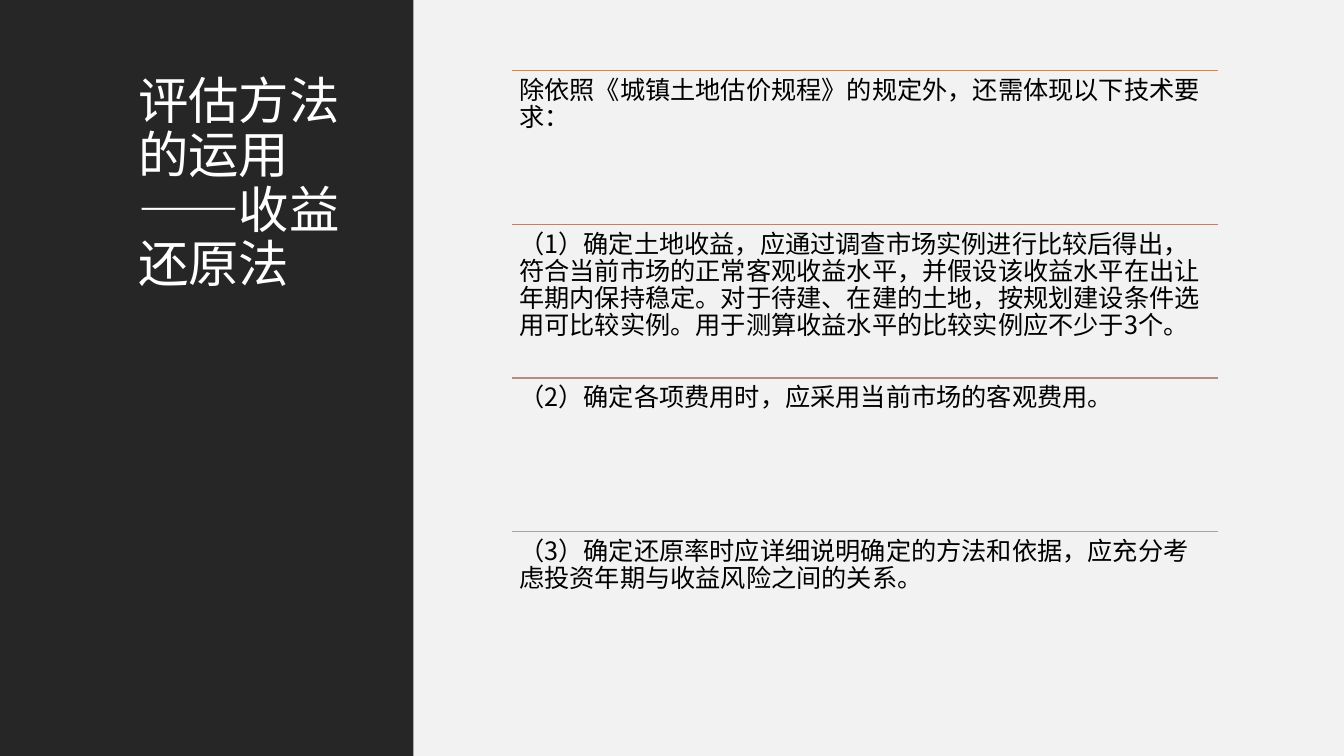
import dataclasses

import lxml.etree
import pptx
import pptx.dml.color
import pptx.enum.lang
import pptx.enum.shapes
import pptx.enum.text
import pptx.oxml.ns
import pptx.util

COLOURS = {
    "sidebar": "262626",
    "content": "F2F2F2",
    "title": "FFFFFF",
    "body": "000000",
    "orange": "ED7D31",
    "terracotta": "D17B5C",
    "mauve": "B98A82",
    "grey": "A5A5A5",
}
FONT = "Noto Sans CJK SC"

# Page layout in inches
PAGE_WIDTH, PAGE_HEIGHT = 13.33, 7.5
SIDEBAR_WIDTH = 4.1
MARGIN_TOP = 0.7
AREA_HEIGHT = PAGE_HEIGHT - 2 * MARGIN_TOP
LIST_LEFT, LIST_WIDTH = 5.08, 7
LIST_INSET = 0.07


@dataclasses.dataclass
class Panel:
    left: float
    width: float
    colour: str


@dataclasses.dataclass
class Requirement:
    text: str
    rule_colour: str


PANELS = [
    Panel(SIDEBAR_WIDTH, PAGE_WIDTH - SIDEBAR_WIDTH, "content"),
    Panel(0, SIDEBAR_WIDTH, "sidebar"),
]
TITLE = "评估方法的运用——收益还原法"
REQUIREMENTS = [
    Requirement("除依照《城镇土地估价规程》的规定外，还需体现以下技术要求：", "orange"),
    Requirement(
        "（1）确定土地收益，应通过调查市场实例进行比较后得出，"
        "符合当前市场的正常客观收益水平，并假设该收益水平在出让年期内保持稳定。"
        "对于待建、在建的土地，按规划建设条件选用可比较实例。"
        "用于测算收益水平的比较实例应不少于3个。",
        "terracotta",
    ),
    Requirement("（2）确定各项费用时，应采用当前市场的客观费用。", "mauve"),
    Requirement(
        "（3）确定还原率时应详细说明确定的方法和依据，"
        "应充分考虑投资年期与收益风险之间的关系。",
        "grey",
    ),
]


def inches(*lengths: float) -> list[pptx.util.Length]:
    return [pptx.util.Inches(length) for length in lengths]


def rgb(name: str) -> pptx.dml.color.RGBColor:
    return pptx.dml.color.RGBColor.from_string(COLOURS[name])


def write_text(shape, text: str, size: float, colour: str) -> None:
    """Fill a shape with one left-aligned, top-anchored paragraph."""
    frame = shape.text_frame
    frame.word_wrap = True
    frame.auto_size = pptx.enum.text.MSO_AUTO_SIZE.NONE
    frame.vertical_anchor = pptx.enum.text.MSO_ANCHOR.TOP
    paragraph = frame.paragraphs[0]
    paragraph.alignment = pptx.enum.text.PP_ALIGN.LEFT
    paragraph.line_spacing = 0.9
    run = paragraph.add_run()
    run.text = text
    run.font.size = pptx.util.Pt(size)
    run.font.name = FONT
    run.font.color.rgb = rgb(colour)
    run.font.language_id = pptx.enum.lang.MSO_LANGUAGE_ID.SIMPLIFIED_CHINESE
    # East Asian typeface
    east_asian = lxml.etree.SubElement(
        run.font._element, pptx.oxml.ns.qn("a:ea")
    )
    east_asian.set("typeface", FONT)


def add_panel(slide, panel: Panel) -> None:
    shape = slide.shapes.add_shape(
        pptx.enum.shapes.MSO_SHAPE.RECTANGLE,
        *inches(panel.left, 0, panel.width, PAGE_HEIGHT),
    )
    shape.shadow.inherit = False
    shape.fill.solid()
    shape.fill.fore_color.rgb = rgb(panel.colour)
    shape.line.fill.background()


def add_requirement(group, requirement: Requirement, top: float, height: float) -> None:
    # Rule above the text
    rule = group.shapes.add_connector(
        pptx.enum.shapes.MSO_CONNECTOR.STRAIGHT,
        *inches(LIST_LEFT, top, LIST_LEFT + LIST_WIDTH, top),
    )
    rule.line.color.rgb = rgb(requirement.rule_colour)
    rule.line.width = pptx.util.Pt(1)
    lxml.etree.SubElement(rule._element.spPr, pptx.oxml.ns.qn("a:effectLst"))

    # Text of the requirement
    box = group.shapes.add_textbox(*inches(LIST_LEFT, top, LIST_WIDTH, height))
    frame = box.text_frame
    frame.margin_left = frame.margin_right = pptx.util.Inches(LIST_INSET)
    frame.margin_top = frame.margin_bottom = pptx.util.Inches(LIST_INSET)
    write_text(box, requirement.text, 18, "body")


def main() -> None:
    presentation = pptx.Presentation()
    presentation.slide_width, presentation.slide_height = inches(PAGE_WIDTH, PAGE_HEIGHT)
    slide = presentation.slides.add_slide(presentation.slide_layouts[5])

    # Background panels
    for panel in PANELS:
        add_panel(slide, panel)

    # Title, raised above the panels
    title = slide.shapes.title
    title.left, title.top, title.width, title.height = inches(
        1.27, MARGIN_TOP, 2.4, AREA_HEIGHT
    )
    write_text(title, TITLE, 36, "title")
    slide.shapes._spTree.append(title._element)

    # Requirements in equal rows
    group = slide.shapes.add_group_shape()
    row_height = AREA_HEIGHT / len(REQUIREMENTS)
    for row, requirement in enumerate(REQUIREMENTS):
        add_requirement(group, requirement, MARGIN_TOP + row * row_height, row_height)

    presentation.save("out.pptx")


if __name__ == "__main__":
    main()
